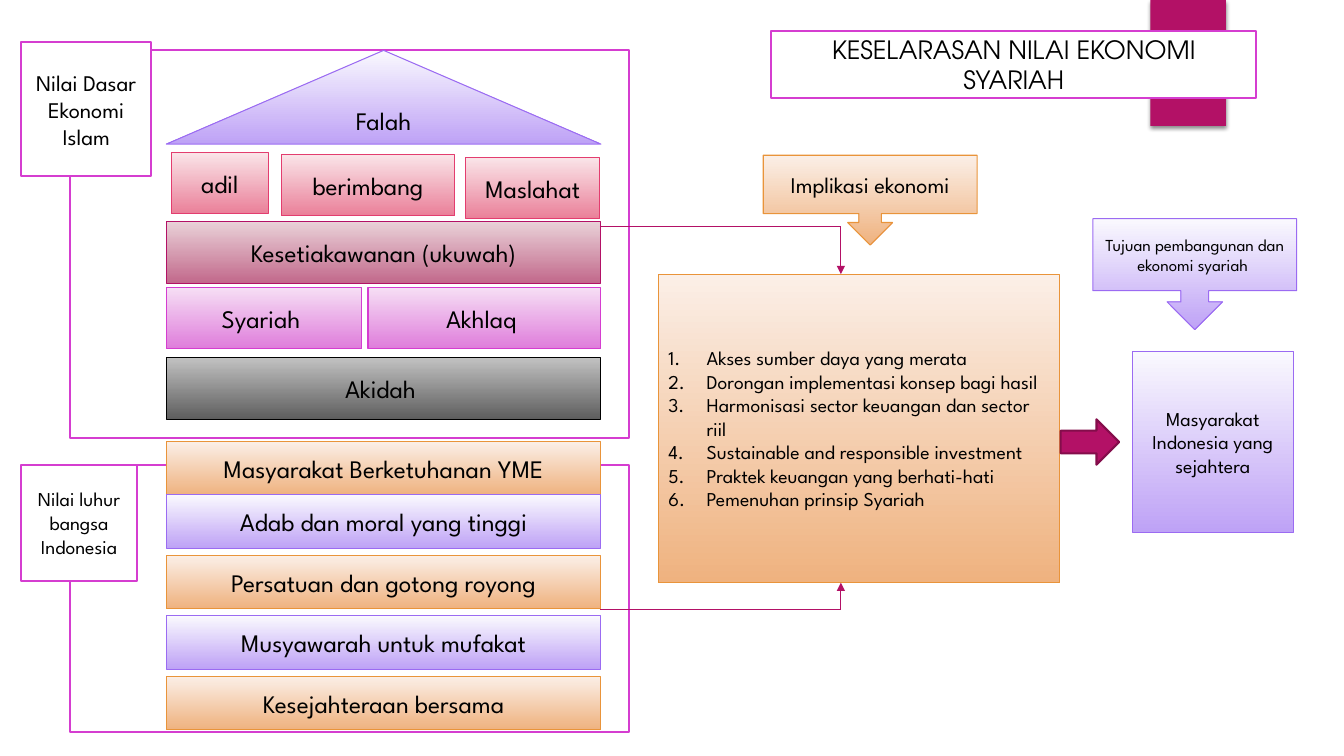
from dataclasses import dataclass

import pptx
import pptx.dml.color
import pptx.enum.shapes
import pptx.enum.text
import pptx.oxml
import pptx.oxml.ns
import pptx.shapes.autoshape
import pptx.slide
import pptx.util

Inches = pptx.util.Inches
Pt = pptx.util.Pt
RGBColor = pptx.dml.color.RGBColor
Shape = pptx.enum.shapes.MSO_SHAPE
Align = pptx.enum.text.PP_ALIGN
qn = pptx.oxml.ns.qn

BODY_FONT = "League Spartan"
TITLE_FONT = "TeX Gyre Adventor"
BLACK = RGBColor(0x00, 0x00, 0x00)
WHITE = RGBColor(0xFF, 0xFF, 0xFF)
MAGENTA = RGBColor(0xB3, 0x11, 0x66)
DARK_MAGENTA = RGBColor(0x84, 0x0D, 0x4B)
ORCHID = RGBColor(0xD5, 0x3D, 0xD0)
PALE_ORCHID = RGBColor(0xF6, 0xDF, 0xF5)
MID_ORCHID = RGBColor(0xDF, 0x7D, 0xDB)
ORANGE = RGBColor(0xE9, 0x94, 0x3A)
PALE_ORANGE = RGBColor(0xFB, 0xEF, 0xE7)
MID_ORANGE = RGBColor(0xEF, 0xB2, 0x7F)
VIOLET = RGBColor(0x9B, 0x6B, 0xF2)
PALE_VIOLET = RGBColor(0xFA, 0xF9, 0xFE)
MID_VIOLET = RGBColor(0xBE, 0xA2, 0xF6)
ROSE = RGBColor(0xE3, 0x3D, 0x6F)
PALE_ROSE = RGBColor(0xFA, 0xE5, 0xE9)
MID_ROSE = RGBColor(0xEA, 0x80, 0x99)
PALE_PLUM = RGBColor(0xE9, 0xD1, 0xD8)
MID_PLUM = RGBColor(0xC2, 0x69, 0x8B)
PALE_GRAY = RGBColor(0xC1, 0xC1, 0xC1)
DARK_GRAY = RGBColor(0x5E, 0x5E, 0x5E)


@dataclass(frozen=True)
class Style:
    """One fill colour is solid; two run from top to bottom."""
    fills: tuple[RGBColor, ...]
    line: RGBColor | None
    line_width: float = 0.75


FRAME = Style((WHITE,), ORCHID, 1.5)
ORANGE_STYLE = Style((PALE_ORANGE, MID_ORANGE), ORANGE)
VIOLET_STYLE = Style((PALE_VIOLET, MID_VIOLET), VIOLET)
ROSE_STYLE = Style((PALE_ROSE, MID_ROSE), ROSE)
ORCHID_STYLE = Style((PALE_ORCHID, MID_ORCHID), ORCHID)
PLUM_STYLE = Style((PALE_PLUM, MID_PLUM), MAGENTA)
GRAY_STYLE = Style((PALE_GRAY, DARK_GRAY), BLACK)
RIBBON = Style((MAGENTA,), None)
ARROW = Style((MAGENTA,), DARK_MAGENTA, 1.5)


@dataclass(frozen=True)
class Box:
    left: float
    top: float
    width: float
    height: float
    style: Style
    lines: tuple[str, ...] = ()
    size: int = 18
    kind: Shape = Shape.RECTANGLE
    font: str = BODY_FONT
    numbered: bool = False


@dataclass(frozen=True)
class Link:
    """A horizontal line that turns at the far end into an arrow."""
    start_y: float
    end_y: float


COLUMN_LEFT, COLUMN_WIDTH = 1.65, 4.31
HOUSE_HEIGHT, VALUE_HEIGHT = 0.61, 0.53
VALUE_TOP, VALUE_STEP = 4.91, 0.6
LINK_START_X, LINK_END_X = 5.95, 8.34

IMPLICATIONS = (
    "Akses sumber daya yang merata",
    "Dorongan implementasi konsep bagi hasil",
    "Harmonisasi sector keuangan dan sector riil",
    "Sustainable and responsible investment",
    "Praktek keuangan yang berhati-hati",
    "Pemenuhan prinsip Syariah",
)
NATIONAL_VALUES = (
    ("Adab dan moral yang tinggi", VIOLET_STYLE),
    ("Persatuan dan gotong royong", ORANGE_STYLE),
    ("Musyawarah untuk mufakat", VIOLET_STYLE),
    ("Kesejahteraan bersama", ORANGE_STYLE),
)
HOUSE_BLOCKS = (
    (COLUMN_LEFT, 3.55, COLUMN_WIDTH, GRAY_STYLE, "Akidah "),
    (COLUMN_LEFT, 2.2, COLUMN_WIDTH, PLUM_STYLE, "Kesetiakawanan (ukuwah)"),
    (3.65, 2.85, 2.31, ORCHID_STYLE, "Akhlaq "),
    (COLUMN_LEFT, 2.85, 1.94, ORCHID_STYLE, "Syariah "),
    (4.62, 1.56, 1.33, ROSE_STYLE, "Maslahat"),
    (2.79, 1.53, 1.72, ROSE_STYLE, "berimbang"),
    (1.7, 1.51, 0.96, ROSE_STYLE, "adil"),
)

BACK_BOXES = [
    Box(0.69, 0.5, 5.55, 3.85, FRAME),
    Box(6.53, 2.72, 3.98, 3.06, ORANGE_STYLE, IMPLICATIONS, 14, numbered=True),
    Box(0.69, 4.61, 5.55, 2.65, FRAME),
]
HOUSE_BOXES = [
    Box(left, top, width, HOUSE_HEIGHT, style, (label,))
    for left, top, width, style, label in HOUSE_BLOCKS
] + [
    Box(COLUMN_LEFT, 0.5, COLUMN_WIDTH, 0.93, VIOLET_STYLE, ("Falah",),
        kind=Shape.ISOSCELES_TRIANGLE),
    Box(0.21, 0.42, 1.29, 1.33, FRAME, ("Nilai Dasar Ekonomi Islam",), 16),
]
VALUE_BOXES = [
    Box(COLUMN_LEFT, 4.38, COLUMN_WIDTH, VALUE_HEIGHT, ORANGE_STYLE,
        ("Masyarakat Berketuhanan YME",)),
] + [
    Box(COLUMN_LEFT, VALUE_TOP + row * VALUE_STEP, COLUMN_WIDTH, VALUE_HEIGHT,
        style, (label,))
    for row, (label, style) in enumerate(NATIONAL_VALUES)
] + [
    Box(0.21, 4.61, 1.15, 1.15, FRAME, ("Nilai luhur bangsa Indonesia",), 14),
]
GOAL_BOXES = [
    Box(11.23, 3.49, 1.6, 1.79, VIOLET_STYLE,
        ("Masyarakat Indonesia yang sejahtera",), 14),
    Box(10.52, 4.16, 0.58, 0.45, ARROW, kind=Shape.RIGHT_ARROW),
    Box(7.65, 0.31, 4.81, 0.66, FRAME,
        ("KESELARASAN NILAI EKONOMI SYARIAH",), font=TITLE_FONT),
    Box(7.57, 1.54, 2.12, 0.89, ORANGE_STYLE, ("Implikasi ekonomi",), 16,
        Shape.DOWN_ARROW_CALLOUT),
    Box(10.84, 2.17, 2.02, 1.1, VIOLET_STYLE,
        ("Tujuan pembangunan dan ekonomi syariah ",), 12,
        Shape.DOWN_ARROW_CALLOUT),
]
LINKS = [Link(2.25, 2.72), Link(6.05, 5.78)]


def add_text(shape: pptx.shapes.autoshape.Shape, box: Box) -> None:
    frame = shape.text_frame
    frame.word_wrap = True
    frame.vertical_anchor = pptx.enum.text.MSO_ANCHOR.MIDDLE
    for index, line in enumerate(box.lines):
        para = frame.add_paragraph() if index else frame.paragraphs[0]
        para.alignment = Align.LEFT if box.numbered else Align.CENTER
        if box.numbered:
            properties = para._p.get_or_add_pPr()
            properties.set("marL", str(Inches(0.38)))
            properties.set("indent", str(Inches(-0.38)))
            number = pptx.oxml.parse_xml(
                f'<a:buAutoNum {pptx.oxml.ns.nsdecls("a")} type="arabicPeriod"/>')
            properties.append(number)
        span = para.add_run()
        span.text = line
        span.font.name = box.font
        span.font.size = Pt(box.size)
        span.font.color.rgb = BLACK


def add_box(page: pptx.slide.Slide, box: Box) -> pptx.shapes.autoshape.Shape:
    shape = page.shapes.add_shape(box.kind, Inches(box.left), Inches(box.top),
                                  Inches(box.width), Inches(box.height))
    shape.shadow.inherit = False
    style = box.style
    if len(style.fills) == 1:
        shape.fill.solid()
        shape.fill.fore_color.rgb = style.fills[0]
    else:
        shape.fill.gradient()
        shape.fill.gradient_angle = 270
        for stop, color in zip(shape.fill.gradient_stops, style.fills):
            stop.color.rgb = color
    if style.line is None:
        shape.line.fill.background()
    else:
        shape.line.color.rgb = style.line
        shape.line.width = Pt(style.line_width)
    if box.lines:
        add_text(shape, box)
    return shape


def add_ribbon(page: pptx.slide.Slide) -> None:
    ribbon = add_box(page, Box(11.41, 0, 0.75, 1.25, RIBBON))
    effects = ribbon.element.spPr.find(qn("a:effectLst"))
    effects.append(pptx.oxml.parse_xml(
        f'<a:outerShdw {pptx.oxml.ns.nsdecls("a")} blurRad="{Pt(3)}" '
        f'dist="{Pt(2)}" dir="5400000" rotWithShape="0"><a:srgbClr val="000000">'
        '<a:alpha val="45000"/></a:srgbClr></a:outerShdw>'))


def add_line(page: pptx.slide.Slide, start: tuple[float, float],
             end: tuple[float, float], arrow: bool) -> None:
    line = page.shapes.add_connector(
        pptx.enum.shapes.MSO_CONNECTOR.STRAIGHT,
        *(Inches(value) for value in start + end))
    line.line.color.rgb = MAGENTA
    line.line.width = Pt(0.75)
    properties = line.element.spPr
    if arrow:
        properties.find(qn("a:ln")).append(pptx.oxml.parse_xml(
            f'<a:tailEnd {pptx.oxml.ns.nsdecls("a")} type="triangle"/>'))
    properties.append(pptx.oxml.parse_xml(
        f'<a:effectLst {pptx.oxml.ns.nsdecls("a")}/>'))


def main() -> None:
    deck = pptx.Presentation()
    deck.slide_width, deck.slide_height = Inches(13.33), Inches(7.5)
    page = deck.slides.add_slide(deck.slide_layouts[6])
    add_ribbon(page)
    for box in BACK_BOXES + HOUSE_BOXES + VALUE_BOXES:
        add_box(page, box)
    for link in LINKS:
        corner = (LINK_END_X, link.start_y)
        add_line(page, (LINK_START_X, link.start_y), corner, arrow=False)
        add_line(page, corner, (LINK_END_X, link.end_y), arrow=True)
    for box in GOAL_BOXES:
        add_box(page, box)
    deck.save("out.pptx")


if __name__ == "__main__":
    main()
